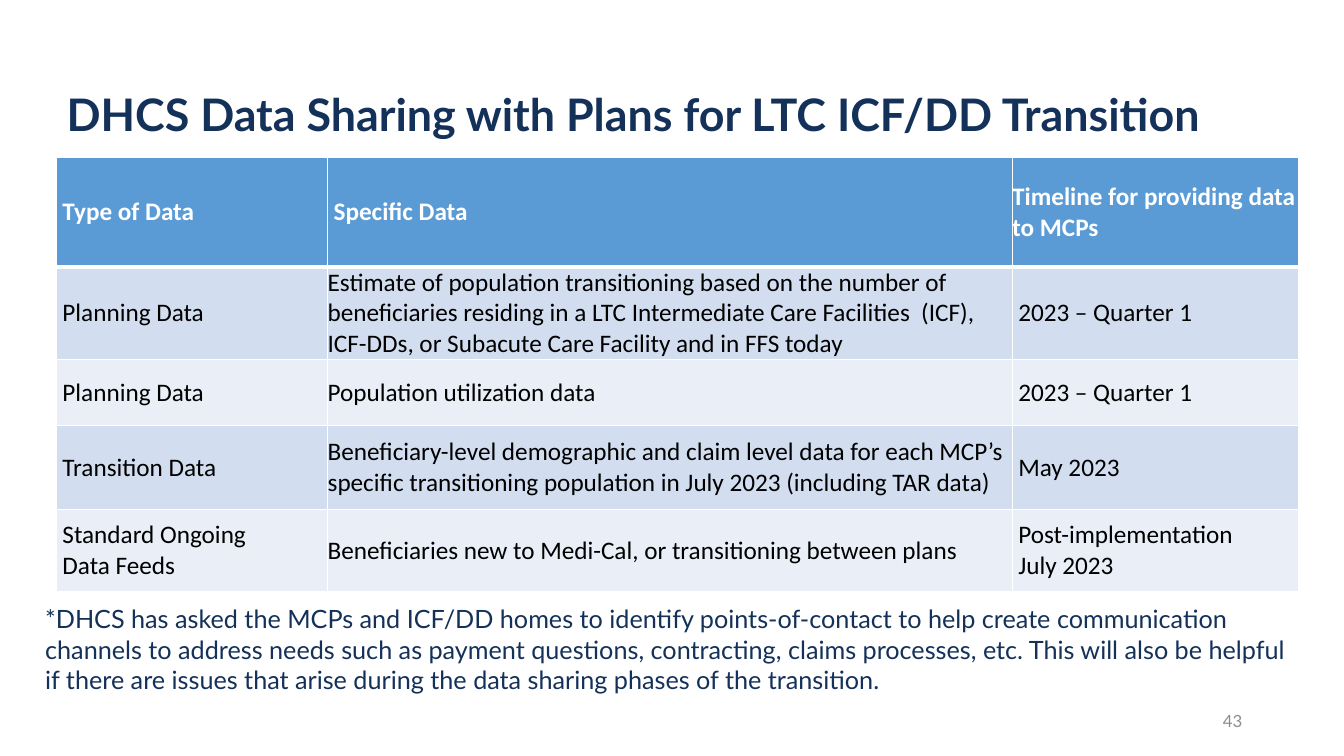
from pptx import Presentation
from pptx.dml.color import RGBColor
from pptx.enum.text import MSO_ANCHOR as Anchor, PP_ALIGN as Align
from pptx.oxml import parse_xml
from pptx.oxml.ns import nsdecls
from pptx.util import Pt

PX = 9144
COLORS = {
    "navy": "14315A", "gray": "8C8C8C", "white": "FFFFFF", "black": "000000",
    "header": "5B9BD5", "odd": "D2DEEF", "even": "EAEFF7",
}


def set_text(tf, text, font, size, color, bold=False, align=Align.LEFT):
    tf.word_wrap = True
    tf.text = text
    for p in tf.paragraphs:
        p.alignment = align
        for r in p.runs:
            r.font.name = font
            r.font.size = Pt(size)
            r.font.bold = bold
            r.font.color.rgb = RGBColor.from_string(COLORS[color])


def add_border(cell, side, points):
    cell._tc.get_or_add_tcPr().append(parse_xml(
        f'<a:ln{side} {nsdecls("a")} w="{Pt(points)}"><a:solidFill>'
        f'<a:srgbClr val="{COLORS["white"]}"/></a:solidFill></a:ln{side}>'))


prs = Presentation()
prs.slide_width, prs.slide_height = 1333 * PX, 750 * PX
s = prs.slides.add_slide(prs.slide_layouts[5])

title = s.shapes.title
title.left, title.top, title.width, title.height = 56 * PX, 60 * PX, 1232 * PX, 112 * PX
tf = title.text_frame
set_text(tf, "DHCS Data Sharing with Plans for LTC ICF/DD Transition", "Lato", 32, "navy", bold=True)
tf.vertical_anchor = Anchor.MIDDLE
tf.paragraphs[0].line_spacing = 0.9

rows = [
    ("Type of Data", "Specific Data", "Timeline for providing data to MCPs"),
    ("Planning Data",
     "Estimate of population transitioning based on the number of beneficiaries residing in a LTC "
     "Intermediate Care Facilities  (ICF), ICF-DDs, or Subacute Care Facility and in FFS today",
     "2023 – Quarter 1"),
    ("Planning Data", "Population utilization data", "2023 – Quarter 1"),
    ("Transition Data",
     "Beneficiary-level demographic and claim level data for each MCP’s specific transitioning "
     "population in July 2023 (including TAR data)",
     "May 2023"),
    ("Standard Ongoing\nData Feeds",
     "Beneficiaries new to Medi-Cal, or transitioning between plans",
     "Post-implementation\nJuly 2023"),
]
col_widths = [269, 679, 284]
row_heights = [109, 87, 66, 83, 81]
flush_cells = {(0, 2), (1, 1), (2, 1), (3, 1), (4, 1)}

table = s.shapes.add_table(
    len(rows), len(col_widths), 56 * PX, 156 * PX,
    sum(col_widths) * PX, sum(row_heights) * PX).table
for column, width in zip(table.columns, col_widths):
    column.width = width * PX
for i, (row, height) in enumerate(zip(rows, row_heights)):
    table.rows[i].height = height * PX
    is_header = i == 0
    fill = "header" if is_header else "odd" if i % 2 else "even"
    for j, text in enumerate(row):
        cell = table.cell(i, j)
        set_text(cell.text_frame, text, "Calibri", 18, "white" if is_header else "black", bold=is_header)
        cell.vertical_anchor = Anchor.MIDDLE
        cell.margin_left = 0 if (i, j) in flush_cells else 6 * PX
        cell.margin_right = cell.margin_top = cell.margin_bottom = 0
        for side in "LRTB":
            thick = (i, side) in [(0, "B"), (1, "T")]
            add_border(cell, side, 3 if thick else 1)
        cell.fill.solid()
        cell.fill.fore_color.rgb = RGBColor.from_string(COLORS[fill])

number = s.shapes.add_textbox(942 * PX, 695 * PX, 300 * PX, 40 * PX).text_frame
set_text(number, "43", "Lato", 12, "gray", align=Align.RIGHT)
number.vertical_anchor = Anchor.MIDDLE

footnote = s.shapes.add_textbox(35 * PX, 594 * PX, 1253 * PX, 102 * PX).text_frame
set_text(
    footnote,
    "*DHCS has asked the MCPs and ICF/DD homes to identify points-of-contact to help create "
    "communication channels to address needs such as payment questions, contracting, claims "
    "processes, etc. This will also be helpful if there are issues that arise during the data "
    "sharing phases of the transition.",
    "Lato", 18, "navy")

prs.save("out.pptx")
